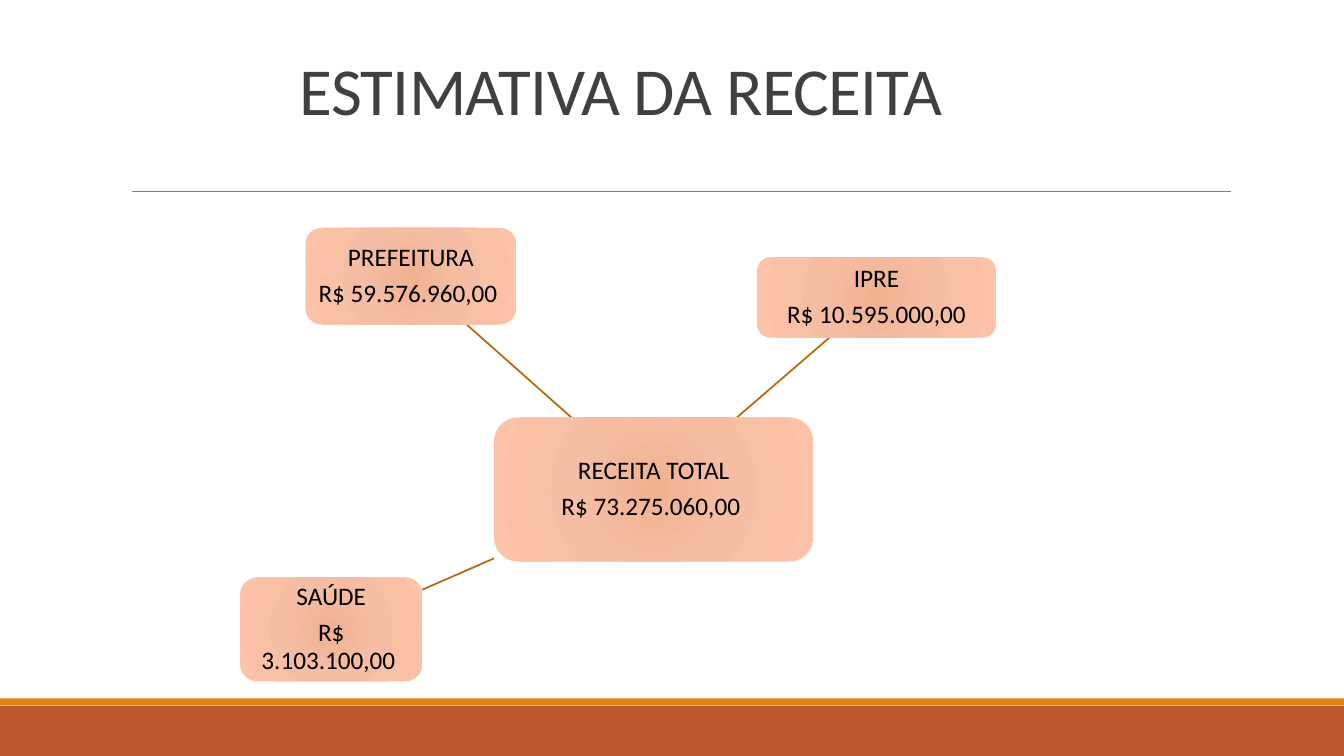
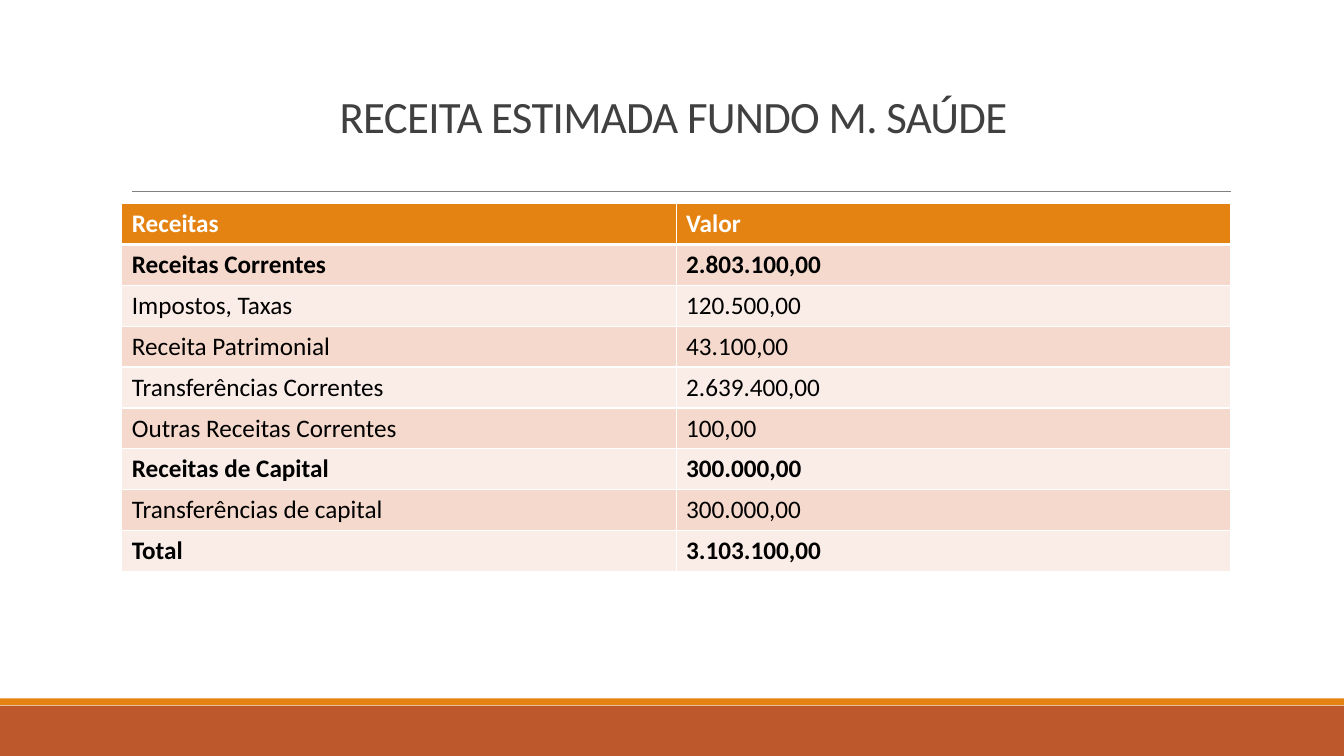
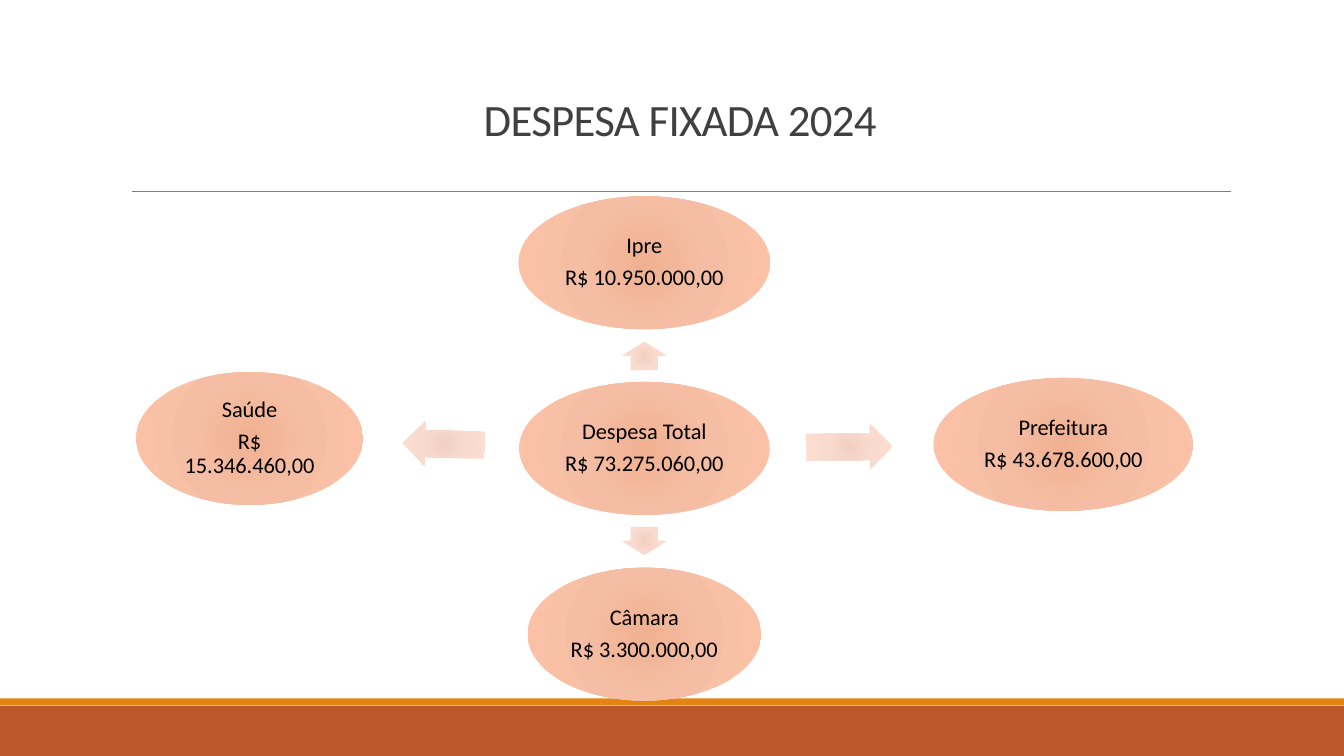
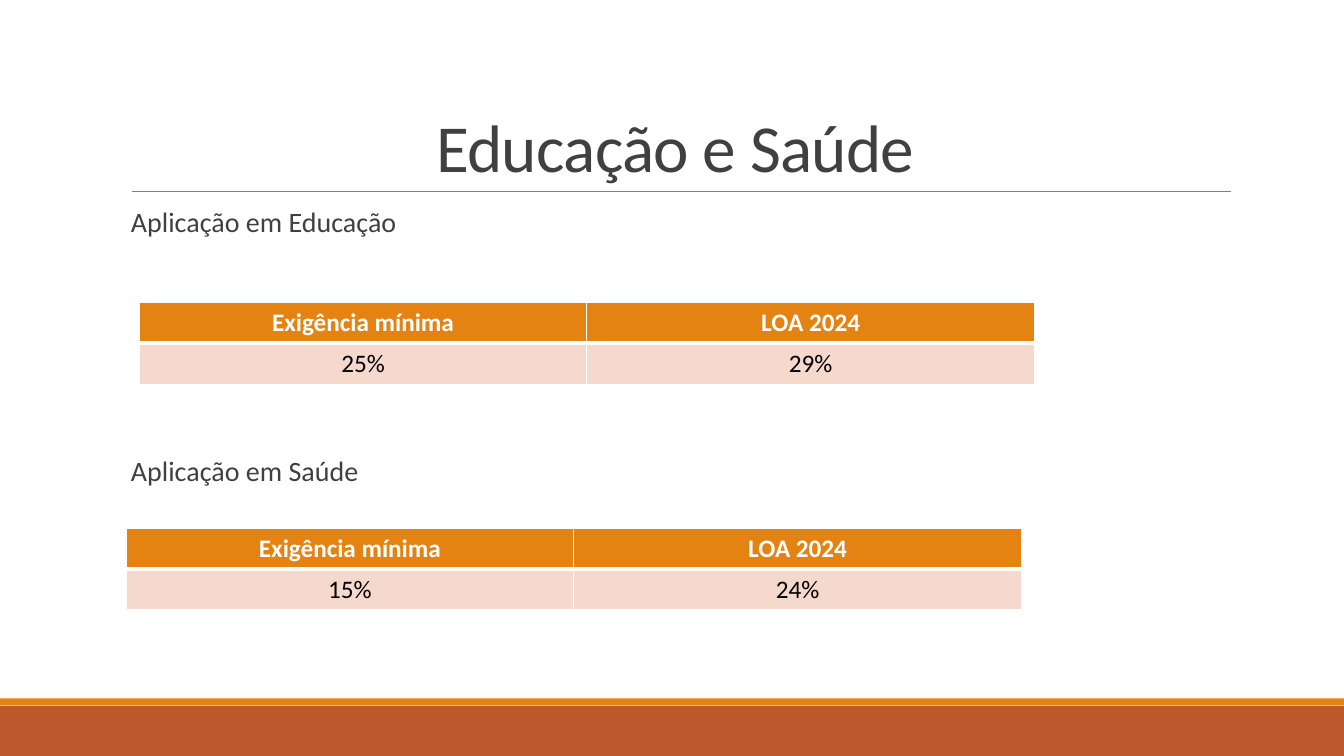
from lxml import etree
from pptx import Presentation
from pptx import util as u
from pptx.dml.color import RGBColor
from pptx.enum import shapes, text
from pptx.oxml import ns

FONT = "Calibri"
BLACK = RGBColor(0x00, 0x00, 0x00)
WHITE = RGBColor(0xFF, 0xFF, 0xFF)
DARK_GRAY = RGBColor(0x40, 0x40, 0x40)
GRAY = RGBColor(0x80, 0x80, 0x80)
RUST = RGBColor(0xBD, 0x58, 0x2C)
ORANGE = RGBColor(0xE4, 0x83, 0x12)
BROWN = RGBColor(0xB7, 0x69, 0x0E)
ROW_FILLS = (RGBColor(0xF5, 0xD9, 0xCC), RGBColor(0xFA, 0xED, 0xE7))
NODE_STOPS = (
    (0, RGBColor(0xF0, 0xB1, 0x91)),
    (45, RGBColor(0xF5, 0xBE, 0xA4)),
    (100, RGBColor(0xFD, 0xC3, 0xA8)),
)
ARROW_STOPS = (
    (0, RGBColor(0xF2, 0xD0, 0xC1)),
    (45, RGBColor(0xF8, 0xDA, 0xCE)),
    (100, RGBColor(0xFD, 0xDD, 0xD0)),
)
SLIDE_WIDTH = 33.87
SLIDE_HEIGHT = 19.05
ROW_HEIGHT = 1.03


def write_text(frame, content, size=18, color=BLACK, bold=False, align=text.PP_ALIGN.CENTER,
               anchor=text.MSO_ANCHOR.MIDDLE, line_spacing=1.0, space_after=0,
               inset=None, tracking=None):
    """Write one paragraph per line of content; inset is in cm, tracking in points."""
    frame.word_wrap = True
    frame.vertical_anchor = anchor
    if inset is not None:
        frame.margin_left = frame.margin_right = u.Cm(inset)
        frame.margin_top = frame.margin_bottom = u.Cm(inset)
    for index, line in enumerate(content.split("\n")):
        paragraph = frame.add_paragraph() if index else frame.paragraphs[0]
        paragraph.alignment = align
        paragraph.line_spacing = line_spacing
        paragraph.space_before = u.Pt(0)
        paragraph.space_after = u.Pt(space_after)
        run = paragraph.add_run()
        run.text = line
        run.font.name = FONT
        run.font.size = u.Pt(size)
        run.font.bold = bold
        run.font.color.rgb = color
        if tracking is not None:
            run.font._element.set("spc", str(int(tracking * 100)))


def add_color(parent, color):
    fill = etree.SubElement(parent, ns.qn("a:solidFill"))
    etree.SubElement(fill, ns.qn("a:srgbClr"), val=str(color))


def fill_radially(shape, stops):
    """Fill from the centre outwards with (percent, colour) stops."""
    shape.fill.gradient()
    gradient = shape._element.spPr.find(ns.qn("a:gradFill"))
    for child in list(gradient):
        gradient.remove(child)
    stop_list = etree.SubElement(gradient, ns.qn("a:gsLst"))
    for percent, color in stops:
        stop = etree.SubElement(stop_list, ns.qn("a:gs"), pos=str(percent * 1000))
        etree.SubElement(stop, ns.qn("a:srgbClr"), val=str(color))
    circle = etree.SubElement(gradient, ns.qn("a:path"), {"path": "circle"})
    etree.SubElement(circle, ns.qn("a:fillToRect"), {side: "100000" for side in "ltrb"})


def set_borders(cell, widths):
    """Draw white borders; widths maps a side (L, R, T, B) to points."""
    properties = cell._tc.get_or_add_tcPr()
    for index, (side, width) in enumerate(widths.items()):
        line = etree.Element(ns.qn(f"a:ln{side}"), w=str(u.Pt(width)))
        add_color(line, WHITE)
        properties.insert(index, line)


class Deck:
    def __init__(self):
        self.presentation = Presentation()
        self.presentation.slide_width = u.Cm(SLIDE_WIDTH)
        self.presentation.slide_height = u.Cm(SLIDE_HEIGHT)
        self.slide = None

    def new_slide(self, title, left, top, width, height, size):
        self.slide = self.presentation.slides.add_slide(self.presentation.slide_layouts[5])
        self.band(17.78, 1.27, RUST)
        self.band(17.6, 0.17, ORANGE)
        self.line((3.33, 4.82), (31.01, 4.82), GRAY, 0.5)
        placeholder = self.slide.shapes.title
        placeholder.left, placeholder.top = u.Cm(left), u.Cm(top)
        placeholder.width, placeholder.height = u.Cm(width), u.Cm(height)
        placeholder.text_frame.auto_size = text.MSO_AUTO_SIZE.NONE
        write_text(placeholder.text_frame, title, size=size, color=DARK_GRAY,
                   anchor=text.MSO_ANCHOR.BOTTOM, line_spacing=0.85, tracking=-0.5)

    def shape(self, kind, left, top, width, height):
        shape = self.slide.shapes.add_shape(kind, u.Cm(left), u.Cm(top), u.Cm(width), u.Cm(height))
        shape.shadow.inherit = False
        shape.line.fill.background()
        return shape

    def band(self, top, height, color):
        band = self.shape(shapes.MSO_SHAPE.RECTANGLE, 0, top, SLIDE_WIDTH, height)
        band.fill.solid()
        band.fill.fore_color.rgb = color

    def line(self, start, end, color, width):
        line = self.slide.shapes.add_connector(
            shapes.MSO_CONNECTOR.STRAIGHT, *(u.Cm(value) for value in start + end))
        line.line.color.rgb = color
        line.line.width = u.Pt(width)
        etree.SubElement(line._element.spPr, ns.qn("a:effectLst"))

    def node(self, kind, content, left, top, width, height, size, inset):
        node = self.shape(kind, left, top, width, height)
        fill_radially(node, NODE_STOPS)
        write_text(node.text_frame, content, size=size, line_spacing=0.9,
                   space_after=round(0.35 * size, 1), inset=inset)

    def box(self, content, left, top, width, height):
        self.node(shapes.MSO_SHAPE.ROUNDED_RECTANGLE, content, left, top, width, height, 18, 0.13)

    def ellipse(self, content, center_x, center_y, width, height=3.35):
        self.node(shapes.MSO_SHAPE.OVAL, content, center_x - width / 2, center_y - height / 2,
                  width, height, 16, 0.05)

    def arrow(self, center_x, center_y, length, rotation, height=1.14):
        arrow = self.shape(shapes.MSO_SHAPE.RIGHT_ARROW, center_x - length / 2,
                           center_y - height / 2, length, height)
        arrow.adjustments[0], arrow.adjustments[1] = 0.6, 0.5
        arrow.rotation = rotation
        fill_radially(arrow, ARROW_STOPS)

    def label(self, content, left, top):
        label = self.slide.shapes.add_textbox(u.Cm(left), u.Cm(top), u.Cm(27.6), u.Cm(1))
        write_text(label.text_frame, content, size=20, color=DARK_GRAY,
                   align=text.PP_ALIGN.LEFT, anchor=text.MSO_ANCHOR.TOP,
                   line_spacing=0.9, inset=0.13)
        label.text_frame.margin_left = 0

    def table(self, rows, left, top, column_width, align, bold_rows=()):
        """Add a banded table whose first row is the header."""
        columns = len(rows[0])
        table = self.slide.shapes.add_table(
            len(rows), columns, u.Cm(left), u.Cm(top),
            u.Cm(column_width * columns), u.Cm(ROW_HEIGHT * len(rows))).table
        for column in table.columns:
            column.width = u.Cm(column_width)
        for row_index, values in enumerate(rows):
            header = row_index == 0
            table.rows[row_index].height = u.Cm(ROW_HEIGHT)
            for column_index, value in enumerate(values):
                cell = table.cell(row_index, column_index)
                cell.fill.solid()
                cell.fill.fore_color.rgb = ORANGE if header else ROW_FILLS[(row_index - 1) % 2]
                write_text(cell.text_frame, value, color=WHITE if header else BLACK,
                           bold=header or row_index in bold_rows, align=align,
                           anchor=text.MSO_ANCHOR.TOP)
                set_borders(cell, {"L": 1, "R": 1, "T": 1, "B": 3} if header
                            else {"L": 1, "R": 1, "B": 1})


def add_revenue_estimate(deck):
    deck.new_slide("ESTIMATIVA DA RECEITA", 3.71, 1.3, 23.88, 2.08, 48)
    for start, end in (
        ((14.4, 10.52), (11.73, 8.15)),
        ((18.57, 10.52), (20.9, 8.51)),
        ((12.45, 14.07), (10.64, 14.86)),
    ):
        deck.line(start, end, BROWN, 1.25)
    deck.box("RECEITA TOTAL\nR$ 73.275.060,00 ", 12.45, 10.52, 8.05, 3.63)
    deck.box("PREFEITURA\nR$ 59.576.960,00 ", 7.7, 5.74, 5.31, 2.44)
    deck.box("IPRE\nR$ 10.595.000,00", 19.08, 6.48, 6.02, 2.03)
    deck.box("SAÚDE\nR$ 3.103.100,00 ", 6.05, 14.55, 4.6, 2.62)


def add_health_fund_revenue(deck):
    deck.new_slide("RECEITA ESTIMADA FUNDO M. SAÚDE", 5.03, 1.7, 23.88, 2.03, 32)
    rows = (
        ("Receitas", "Valor"),
        ("Receitas Correntes", "2.803.100,00"),
        ("Impostos, Taxas", "120.500,00"),
        ("Receita Patrimonial", "43.100,00"),
        ("Transferências Correntes", "2.639.400,00"),
        ("Outras Receitas Correntes", "100,00"),
        ("Receitas de Capital", "300.000,00"),
        ("Transferências de capital", "300.000,00"),
        ("Total", "3.103.100,00"),
    )
    deck.table(rows, 3.07, 5.13, 13.97, text.PP_ALIGN.LEFT, bold_rows=(1, 6, 8))


def add_fixed_expenses(deck):
    deck.new_slide("DESPESA FIXADA 2024", 5.2, 1.75, 23.88, 2.06, 32)
    hub_x, hub_y = 16.24, 11.3
    ellipse_step, arrow_step = 4.68, 2.33
    deck.ellipse("Despesa Total\nR$ 73.275.060,00", hub_x, hub_y, 6.32)
    deck.ellipse("Ipre\nR$ 10.950.000,00", hub_x, hub_y - ellipse_step, 6.35)
    deck.ellipse("Prefeitura\nR$ 43.678.600,00", 26.8, 11.2, 6.55)
    deck.ellipse("Câmara\nR$ 3.300.000,00", hub_x, hub_y + ellipse_step, 5.89)
    deck.ellipse("Saúde\nR$ 15.346.460,00", 6.29, 11.05, 5.72)
    deck.arrow(hub_x, hub_y - arrow_step, 0.71, 270)
    deck.arrow(21.41, 11.26, 2.18, 359.4)
    deck.arrow(hub_x, hub_y + arrow_step, 0.71, 90)
    deck.arrow(11.18, 11.19, 2.08, 181.5)


def add_education_and_health(deck):
    deck.new_slide("Educação e Saúde", 3.05, 0.79, 27.94, 4.04, 48)
    for area, label_top, table_left, table_top, minimum, budget in (
        ("Educação", 5.13, 3.51, 7.62, "25%", "29%"),
        ("Saúde", 11.4, 3.18, 13.31, "15%", "24%"),
    ):
        deck.label(f"Aplicação em {area}", 3.3, label_top)
        deck.table((("Exigência mínima", "LOA 2024"), (minimum, budget)),
                   table_left, table_top, 11.28, text.PP_ALIGN.CENTER)


def main():
    deck = Deck()
    add_revenue_estimate(deck)
    add_health_fund_revenue(deck)
    add_fixed_expenses(deck)
    add_education_and_health(deck)
    deck.presentation.save("out.pptx")


if __name__ == "__main__":
    main()
